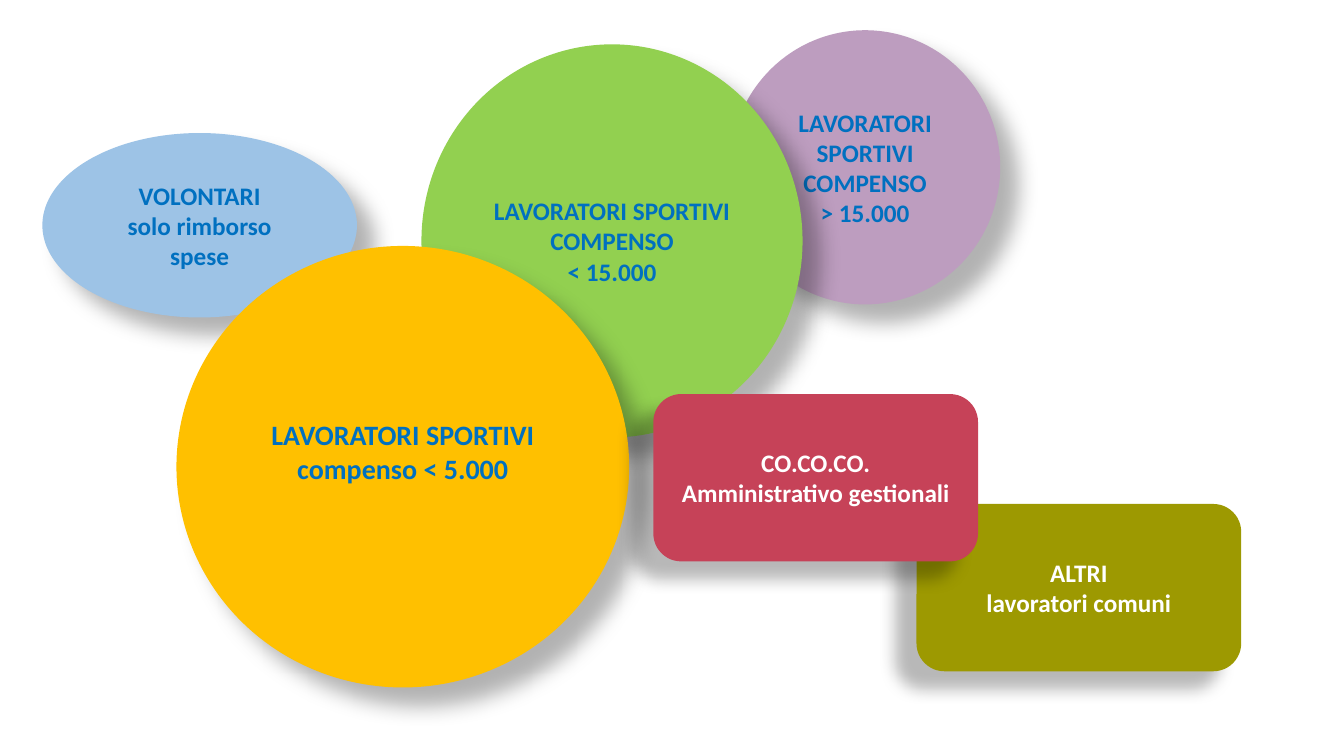
from lxml.etree import SubElement
from pptx import Presentation
from pptx.dml.color import RGBColor
from pptx.enum.shapes import MSO_SHAPE
from pptx.enum.text import MSO_ANCHOR, PP_ALIGN
from pptx.oxml.ns import qn
from pptx.util import Inches, Pt

PURPLE = RGBColor(0xBD, 0x9D, 0xBF)
GREEN = RGBColor(0x92, 0xD0, 0x50)
LIGHT_BLUE = RGBColor(0x9D, 0xC3, 0xE6)
AMBER = RGBColor(0xFF, 0xC0, 0x00)
OLIVE = RGBColor(0x9D, 0x99, 0x01)
CRIMSON = RGBColor(0xC6, 0x42, 0x58)
TEXT_BLUE = RGBColor(0x00, 0x70, 0xC0)
WHITE = RGBColor(0xFF, 0xFF, 0xFF)

# Shape type, text colour and shadow (opacity %, blur pt, distance pt, angle)
CIRCLE = (MSO_SHAPE.OVAL, TEXT_BLUE, (30, 15, 18, 45))
BOX = (MSO_SHAPE.ROUNDED_RECTANGLE, WHITE, (28, 11.8, 19.7, 141))


def add_shadow(shape, opacity, blur, distance, angle):
    shape.shadow.inherit = False
    effects = shape._element.spPr.find(qn("a:effectLst"))
    shadow = SubElement(effects, qn("a:outerShdw"), blurRad=str(Pt(blur)),
                        dist=str(Pt(distance)), dir=str(angle * 60000),
                        rotWithShape="0")
    color = SubElement(shadow, qn("a:srgbClr"), val="000000")
    SubElement(color, qn("a:alpha"), val=str(opacity * 1000))


presentation = Presentation()
presentation.slide_width = Inches(13.33)
presentation.slide_height = Inches(7.5)
slide = presentation.slides.add_slide(presentation.slide_layouts[6])

# Worker categories, from back to front
categories = [
    (CIRCLE, PURPLE, (7.24, 0.3, 2.68, 2.72), 18, 0.05,
     "LAVORATORI SPORTIVI\nCOMPENSO\n> 15.000"),
    (CIRCLE, GREEN, (4.18, 0.44, 3.78, 3.9), 18, 0.05,
     "LAVORATORI SPORTIVI\nCOMPENSO\n< 15.000"),
    (CIRCLE, LIGHT_BLUE, (0.42, 1.32, 3.12, 1.83), 18, 0.05,
     "VOLONTARI\nsolo rimborso spese"),
    (CIRCLE, AMBER, (1.75, 2.44, 4.49, 4.38), 20, 0.35,
     "LAVORATORI SPORTIVI compenso < 5.000"),
    (BOX, OLIVE, (9.09, 5, 3.22, 1.66), 18, 0.05,
     "ALTRI\nlavoratori comuni"),
    (BOX, CRIMSON, (6.48, 3.91, 3.22, 1.66), 18, 0.05,
     "CO.CO.CO.\nAmministrativo gestionali"),
]

for style, fill_color, position, font_size, bottom_margin, text in categories:
    shape_type, text_color, shadow = style
    shape = slide.shapes.add_shape(shape_type, *map(Inches, position))
    shape.fill.solid()
    shape.fill.fore_color.rgb = fill_color
    shape.line.fill.background()
    add_shadow(shape, *shadow)

    text_frame = shape.text_frame
    text_frame.text = text
    text_frame.word_wrap = True
    text_frame.vertical_anchor = MSO_ANCHOR.MIDDLE
    text_frame.margin_bottom = Inches(bottom_margin)
    for paragraph in text_frame.paragraphs:
        paragraph.alignment = PP_ALIGN.CENTER
        for run in paragraph.runs:
            run.font.name = "Calibri"
            run.font.size = Pt(font_size)
            run.font.bold = True
            run.font.color.rgb = text_color

presentation.save("out.pptx")
